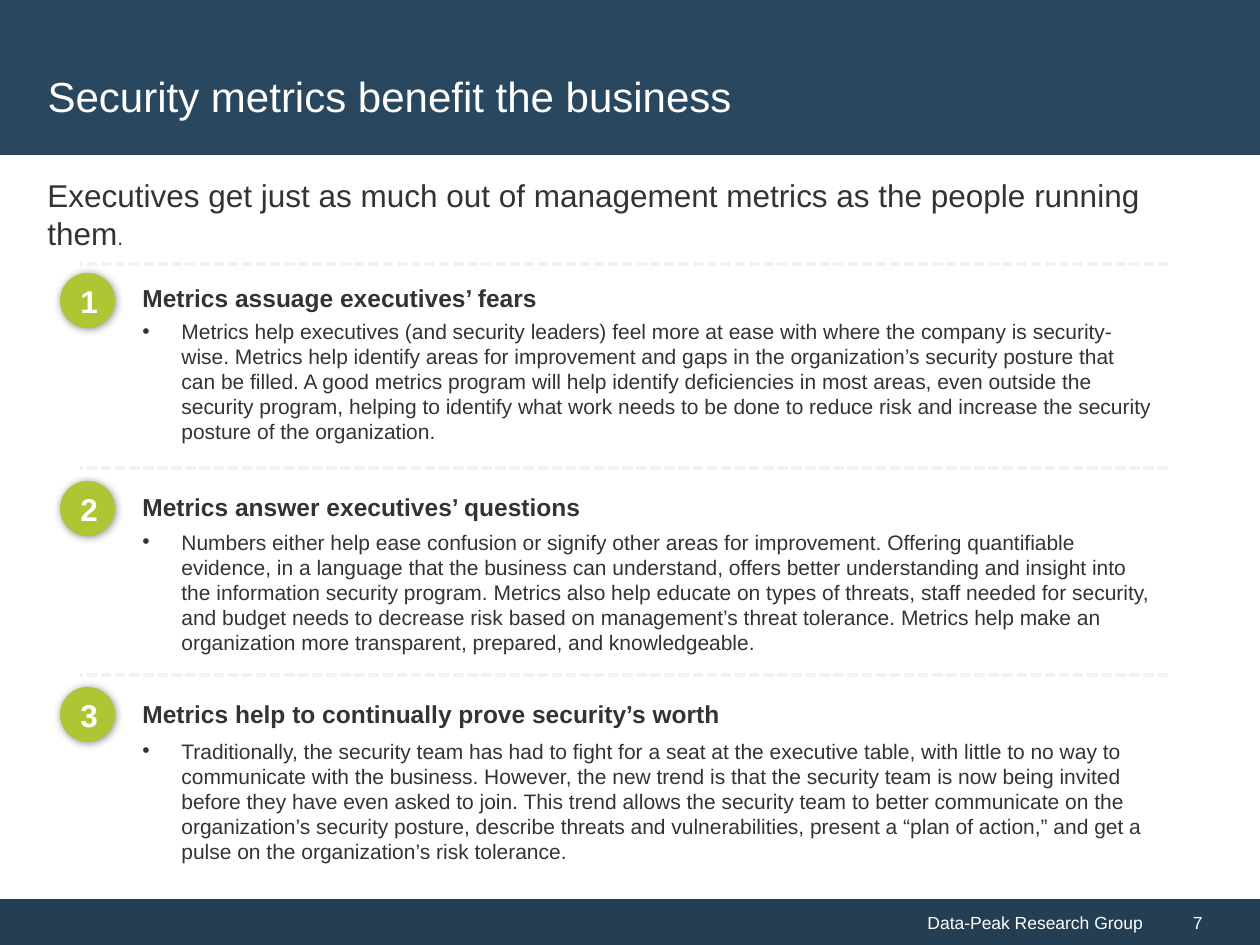
from dataclasses import dataclass

from lxml.etree import SubElement
from pptx import Presentation
from pptx.dml.color import RGBColor
from pptx.enum.dml import MSO_LINE
from pptx.enum.shapes import MSO_CONNECTOR, MSO_SHAPE
from pptx.enum.text import MSO_ANCHOR, MSO_AUTO_SIZE, PP_ALIGN
from pptx.oxml.ns import qn
from pptx.util import Pt


@dataclass(frozen=True)
class Theme:
    """Colours, font and type sizes."""
    font: str = "Arial"
    band: str = "29475F"
    foot: str = "243F54"
    badge: str = "B0C534"
    rule: str = "F2F2F2"
    ink: str = "333333"
    white: str = "FFFFFF"
    title: int = 24
    lead: int = 18
    head: int = 14
    body: int = 12
    small: int = 10


THEME = Theme()
WIDE, HIGH = 1260, 945

SECTIONS = [
    ((60, 264, 1108, 204), (9, 13, 48), "Metrics assuage executives’ fears",
     "Metrics help executives (and security leaders) feel more at ease with where the company is "
     "security-wise. Metrics help identify areas for improvement and gaps in the organization’s "
     "security posture that can be filled. A good metrics program will help identify deficiencies "
     "in most areas, even outside the security program, helping to identify what work needs to be "
     "done to reduce risk and increase the security posture of the organization."),
    ((60, 468, 1108, 207), (13, 18, 55), "Metrics answer executives’ questions",
     "Numbers either help ease confusion or signify other areas for improvement. Offering "
     "quantifiable evidence, in a language that the business can understand, offers better "
     "understanding and insight into the information security program. Metrics also help educate "
     "on types of threats, staff needed for security, and budget needs to decrease risk based on "
     "management’s threat tolerance. Metrics help make an organization more transparent, "
     "prepared, and knowledgeable."),
    ((60, 675, 1108, 207), (12, 18, 57), "Metrics help to continually prove security’s worth",
     "Traditionally, the security team has had to fight for a seat at the executive table, with "
     "little to no way to communicate with the business. However, the new trend is that the "
     "security team is now being invited before they have even asked to join. This trend allows "
     "the security team to better communicate on the organization’s security posture, describe "
     "threats and vulnerabilities, present a “plan of action,” and get a pulse on the "
     "organization’s risk tolerance."),
]


def px(num):
    """Turn px into EMU."""
    return round(num * 914400 / 126)


def rgb(code):
    """Turn a hex code into a colour."""
    return RGBColor.from_string(code)


def write(shape, text, size, color, bold=False, align=PP_ALIGN.LEFT, anchor=MSO_ANCHOR.TOP):
    """Put one styled paragraph in a shape and return it."""
    frame = shape.text_frame
    frame.word_wrap = True
    frame.auto_size = MSO_AUTO_SIZE.NONE
    frame.vertical_anchor = anchor
    para = frame.paragraphs[0]
    para.text = text
    para.alignment = align
    font = para.font
    font.name, font.size, font.bold = THEME.font, Pt(size), bold
    font.color.rgb = rgb(color)
    return para


def add_text(slide, box, text, size, bold=False):
    """Add a text box and return its paragraph."""
    area = slide.shapes.add_textbox(*map(px, box))
    return write(area, text, size, THEME.ink, bold)


def add_block(slide, kind, box, fill):
    """Add a filled shape without line or shadow."""
    block = slide.shapes.add_shape(kind, *map(px, box))
    block.shadow.inherit = False
    block.fill.solid()
    block.fill.fore_color.rgb = rgb(fill)
    block.line.fill.background()
    return block


def add_rule(slide, left, top, right):
    """Add a dashed rule across a section."""
    rule = slide.shapes.add_connector(
        MSO_CONNECTOR.STRAIGHT, px(right), px(top), px(left), px(top))
    rule.line.color.rgb = rgb(THEME.rule)
    rule.line.width = Pt(2)
    rule.line.dash_style = MSO_LINE.SQUARE_DOT
    SubElement(rule._element.spPr, qn("a:effectLst"))


def add_badge(slide, box, num):
    """Add a numbered circle with a soft shadow."""
    badge = add_block(slide, MSO_SHAPE.OVAL, box, THEME.badge)
    effects = badge._element.spPr.find(qn("a:effectLst"))
    shade = SubElement(effects, qn("a:outerShdw"), blurRad=str(Pt(5)),
                       dist=str(Pt(1)), dir="2700000", algn="tl", rotWithShape="0")
    color = SubElement(shade, qn("a:srgbClr"), val="000000")
    SubElement(color, qn("a:alpha"), val="45000")
    write(badge, str(num), THEME.lead, THEME.white, True, PP_ALIGN.CENTER, MSO_ANCHOR.MIDDLE)


def add_bullet(para, indent):
    """Give a paragraph a hanging bullet."""
    props = para._p.get_or_add_pPr()
    props.set("marL", str(px(indent)))
    props.set("indent", str(-px(indent)))
    SubElement(props, qn("a:buFont"), typeface=THEME.font)
    SubElement(props, qn("a:buChar"), char="•")
    props.append(props.find(qn("a:defRPr")))


def add_header(slide, box):
    """Place the title on its band."""
    left, top, width, height = box
    band = add_block(slide, MSO_SHAPE.RECTANGLE, box, THEME.band)
    title = slide.shapes.title
    band._element.addnext(title._element)
    title.left, title.top = px(left + 35), px(top + 37)
    title.width, title.height = px(width - 72), px(height - 37)
    write(title, "Security metrics benefit the business", THEME.title, THEME.white,
          anchor=MSO_ANCHOR.MIDDLE)


def add_lead(slide, box):
    """Place the lead sentence with its small full stop."""
    para = add_text(
        slide, box,
        "Executives get just as much out of management metrics as the people running them",
        THEME.lead)
    para.space_before = Pt(4)
    stop = para.add_run()
    stop.text = "."
    stop.font.size = Pt(THEME.body)


def add_section(slide, box, drops, num, head, body):
    """Place a rule, badge, heading and bullet in a box."""
    left, top, width, _ = box
    badge, title, text = (top + drop for drop in drops)
    add_rule(slide, left + 20, top, left + width)
    add_badge(slide, (left, badge, 55, 55), num)
    add_text(slide, (left + 70, title, 1018, 43), head, THEME.head, True)
    add_bullet(add_text(slide, (left + 70, text, 1038, 140), body, THEME.body), 39)


def add_footer(slide, box):
    """Place the group name and page number."""
    left, top, width, height = box
    split = width - 105
    name = add_block(slide, MSO_SHAPE.RECTANGLE, (left, top, split, height), THEME.foot)
    write(name, "Data-Peak Research Group", THEME.small, THEME.white,
          align=PP_ALIGN.RIGHT, anchor=MSO_ANCHOR.MIDDLE)
    page = add_block(slide, MSO_SHAPE.RECTANGLE, (left + split, top, 105, height), THEME.foot)
    page.text_frame.margin_left = px(38)
    write(page, "7", THEME.small, THEME.white, anchor=MSO_ANCHOR.MIDDLE)


def main():
    """Build and save the slide."""
    deck = Presentation()
    deck.slide_width, deck.slide_height = px(WIDE), px(HIGH)
    slide = deck.slides.add_slide(deck.slide_layouts[5])
    add_footer(slide, (0, 899, WIDE, 46))
    add_header(slide, (0, 0, WIDE, 155))
    add_lead(slide, (35, 170, 1188, 91))
    for num, (box, drops, head, body) in enumerate(SECTIONS, 1):
        add_section(slide, box, drops, num, head, body)
    deck.save("out.pptx")


if __name__ == "__main__":
    main()
